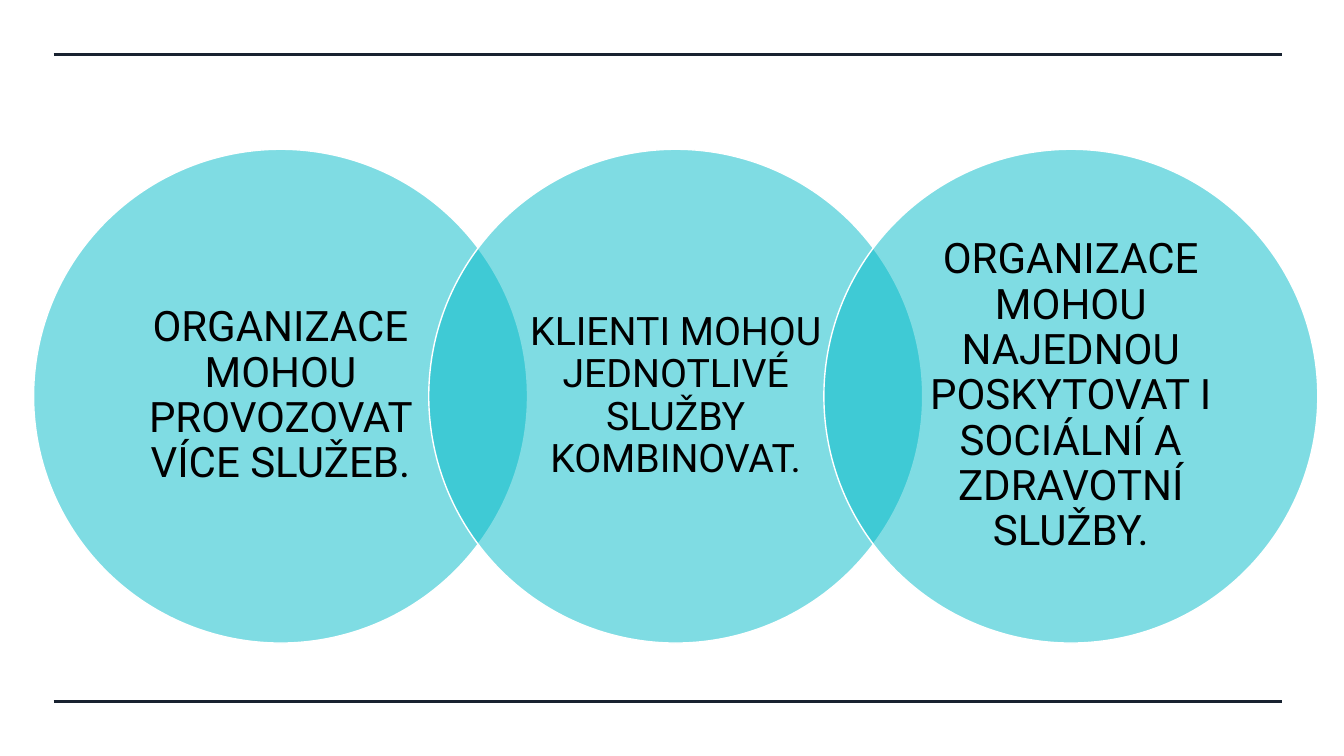
import dataclasses

import pptx
import pptx.dml.color
import pptx.enum.shapes
import pptx.enum.text
import pptx.oxml.ns
import pptx.util
from lxml import etree


@dataclasses.dataclass(frozen=True)
class Theme:
    font: str = "Roboto"
    rule: str = "182230"
    circle: str = "00BAC8"
    outline: str = "FFFFFF"
    text: str = "000000"
    circle_opacity: int = 50
    rule_width: float = 2.25
    outline_width: float = 1
    large: int = 30
    medium: int = 28


def rgb(color):
    return pptx.dml.color.RGBColor.from_string(color)


def write_text(text_frame, text, *, size, font, color, line_spacing=0.9):
    """Fill a text frame with one centred paragraph."""
    text_frame.word_wrap = True
    text_frame.vertical_anchor = pptx.enum.text.MSO_ANCHOR.MIDDLE
    text_frame.margin_left = text_frame.margin_right = pptx.util.Inches(0.27)
    text_frame.margin_top = text_frame.margin_bottom = pptx.util.Inches(0.04)
    paragraph = text_frame.paragraphs[0]
    paragraph.alignment = pptx.enum.text.PP_ALIGN.CENTER
    paragraph.line_spacing = line_spacing
    run = paragraph.add_run()
    run.text = text
    run.font.name = font
    run.font.size = pptx.util.Pt(size)
    run.font.color.rgb = rgb(color)


class SlideBuilder:
    """Draws on a slide divided into 40 columns and 50 rows."""

    COLUMNS = 40
    ROWS = 50

    def __init__(self, presentation, theme):
        self.theme = theme
        self.column = presentation.slide_width / self.COLUMNS
        self.row = presentation.slide_height / self.ROWS
        blank_layout = presentation.slide_layouts[6]
        self.slide = presentation.slides.add_slide(blank_layout)

    def x(self, columns):
        return round(columns * self.column)

    def y(self, rows):
        return round(rows * self.row)

    def rule(self, row, first_column, last_column):
        connector = self.slide.shapes.add_connector(
            pptx.enum.shapes.MSO_CONNECTOR.STRAIGHT,
            self.x(first_column), self.y(row), self.x(last_column), self.y(row))
        connector.line.color.rgb = rgb(self.theme.rule)
        connector.line.width = pptx.util.Pt(self.theme.rule_width)
        properties = connector.element.spPr
        etree.SubElement(properties, pptx.oxml.ns.qn("a:effectLst"))

    def circle(self, left, middle_row, diameter, text, size):
        side = self.x(diameter)
        shape = self.slide.shapes.add_shape(
            pptx.enum.shapes.MSO_SHAPE.OVAL,
            self.x(left), self.y(middle_row) - side // 2, side, side)
        shape.shadow.inherit = False
        shape.fill.solid()
        shape.fill.fore_color.rgb = rgb(self.theme.circle)
        color = shape.element.spPr.find(".//" + pptx.oxml.ns.qn("a:srgbClr"))
        alpha = etree.SubElement(color, pptx.oxml.ns.qn("a:alpha"))
        alpha.set("val", str(self.theme.circle_opacity * 1000))
        shape.line.color.rgb = rgb(self.theme.outline)
        shape.line.width = pptx.util.Pt(self.theme.outline_width)
        write_text(shape.text_frame, text, size=size,
                   font=self.theme.font, color=self.theme.text)


def main():
    presentation = pptx.Presentation()
    presentation.slide_width = pptx.util.Inches(13.33)
    presentation.slide_height = pptx.util.Inches(7.5)
    theme = Theme()
    builder = SlideBuilder(presentation, theme)

    # Rules along the top and bottom
    for row in (3.6, 46.4):
        builder.rule(row, first_column=1.6, last_column=38.16)

    # Three circles, each overlapping the one before by a fifth
    statements = [
        ("ORGANIZACE MOHOU PROVOZOVAT VÍCE SLUŽEB.", theme.large),
        ("KLIENTI MOHOU JEDNOTLIVÉ SLUŽBY KOMBINOVAT.", theme.medium),
        ("ORGANIZACE MOHOU NAJEDNOU POSKYTOVAT I SOCIÁLNÍ A ZDRAVOTNÍ SLUŽBY.",
         theme.large),
    ]
    diameter = 14.7
    for index, (text, size) in enumerate(statements):
        builder.circle(1 + index * 0.8 * diameter, 26.2, diameter, text, size)

    presentation.save("out.pptx")


if __name__ == "__main__":
    main()
